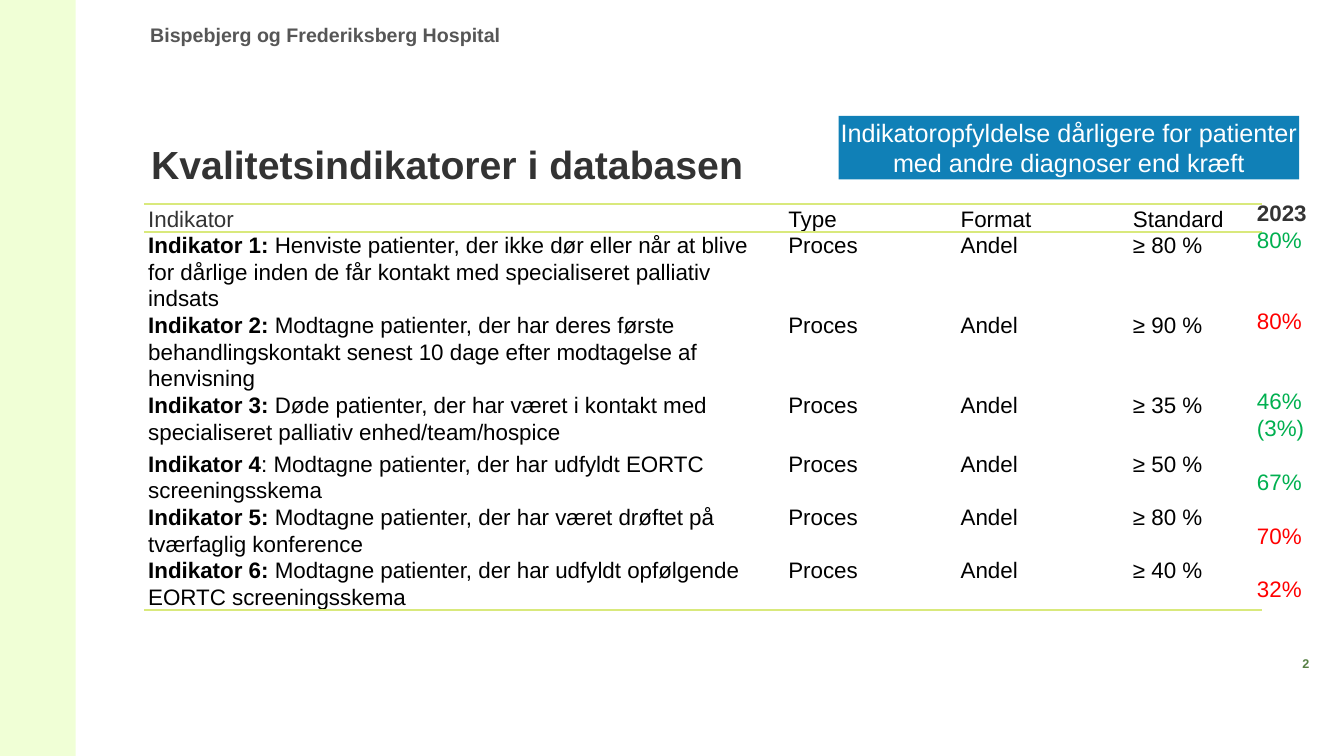
import dataclasses
import typing

import lxml.etree
import pptx
import pptx.dml.color
import pptx.enum.shapes
import pptx.enum.text
import pptx.oxml.ns
import pptx.util

Pt = pptx.util.Pt
RGBColor = pptx.dml.color.RGBColor
Align = pptx.enum.text.PP_ALIGN
Anchor = pptx.enum.text.MSO_ANCHOR
qn = pptx.oxml.ns.qn

DARK = RGBColor(0x33, 0x33, 0x33)
GREY = RGBColor(0x56, 0x56, 0x56)
BLACK = RGBColor(0, 0, 0)
WHITE = RGBColor(0xFF, 0xFF, 0xFF)
MINT = RGBColor(0xF0, 0xFF, 0xD6)
MOSS = RGBColor(0x56, 0x7F, 0x43)
LIME = RGBColor(0xD9, 0xE9, 0x7C)
BLUE = RGBColor(0x10, 0x80, 0xB7)
GREEN = RGBColor(0x00, 0xB0, 0x50)
RED = RGBColor(0xFF, 0x00, 0x00)

FONT = "Arial"
LEAD = 1.07
LINE = 19.18


@dataclasses.dataclass(frozen=True)
class Box:
    left: float
    top: float
    width: float
    height: float

    def place(self) -> tuple:
        return Pt(self.left), Pt(self.top), Pt(self.width), Pt(self.height)


@dataclasses.dataclass(frozen=True)
class Metric:
    label: str
    text: str
    goal: str
    height: float


@dataclasses.dataclass(frozen=True)
class Score:
    text: str
    color: RGBColor
    gap: int = 0
    bold: bool = False


HEADS = ("Indikator", "Type", "Format", "Standard")
WIDTHS = (457.2, 123.12, 123.12, 95.04)
SIDES = ("lnL", "lnR", "lnT", "lnB")
LOW, MID, HIGH = 20.16, 41.76, 57.2

METRICS = (
    Metric("Indikator 1: ", "Henviste patienter, der ikke dør eller når at blive for dårlige "
           "inden de får kontakt med specialiseret palliativ indsats", "≥ 80 %", HIGH),
    Metric("Indikator 2: ", "Modtagne patienter, der har deres første behandlingskontakt "
           "senest 10 dage efter modtagelse af henvisning", "≥ 90 %", HIGH),
    Metric("Indikator 3: ", "Døde patienter, der har været i kontakt med specialiseret "
           "palliativ enhed/team/hospice", "≥ 35 %", MID),
    Metric("Indikator 4", ": Modtagne patienter, der har udfyldt EORTC screeningsskema",
           "≥ 50 %", LOW),
    Metric("Indikator 5: ", "Modtagne patienter, der har været drøftet på tværfaglig konference",
           "≥ 80 %", LOW),
    Metric("Indikator 6: ", "Modtagne patienter, der har udfyldt opfølgende EORTC screeningsskema",
           "≥ 40 %", LOW),
)

SCORES = (
    Score("2023", DARK, bold=True),
    Score("80%", GREEN),
    Score("80%", RED, 2),
    Score("46%", GREEN, 2),
    Score("(3%)", GREEN),
    Score("67%", GREEN, 1),
    Score("70%", RED, 1),
    Score("32%", RED, 1),
)


def write(para: typing.Any, text: str, size: float, color: RGBColor, bold: bool = False) -> None:
    run = para.add_run()
    run.text = text
    run.font.name = FONT
    run.font.size = Pt(size)
    run.font.bold = bold
    run.font.color.rgb = color


def reset(frame: typing.Any) -> typing.Any:
    frame.word_wrap = True
    frame.auto_size = pptx.enum.text.MSO_AUTO_SIZE.NONE
    frame.margin_left = frame.margin_right = 0
    frame.margin_top = frame.margin_bottom = 0
    return frame


def add_text(slide: typing.Any, box: Box) -> typing.Any:
    return reset(slide.shapes.add_textbox(*box.place()).text_frame)


def add_rect(slide: typing.Any, box: Box, fill: RGBColor) -> typing.Any:
    kind = pptx.enum.shapes.MSO_SHAPE.RECTANGLE
    rect = slide.shapes.add_shape(kind, *box.place())
    rect.shadow.inherit = False
    rect.fill.solid()
    rect.fill.fore_color.rgb = fill
    rect.line.fill.background()
    return rect


def add_rules(cell: typing.Any, shown: list[str]) -> None:
    props = cell._tc.get_or_add_tcPr()
    for spot, side in enumerate(SIDES):
        line = lxml.etree.Element(qn(f"a:{side}"), w=str(Pt(1.5)))
        if side in shown:
            fill = lxml.etree.SubElement(line, qn("a:solidFill"))
            lxml.etree.SubElement(fill, qn("a:srgbClr"), val=str(LIME))
        else:
            lxml.etree.SubElement(line, qn("a:noFill"))
        props.insert(spot, line)


def fill_cell(cell: typing.Any, parts: list[tuple[str, bool]], color: RGBColor,
              sides: list[str], anchor: typing.Any) -> None:
    cell.margin_left, cell.margin_right = Pt(2.88), Pt(6)
    cell.margin_top = cell.margin_bottom = 0
    cell.vertical_anchor = anchor
    cell.fill.solid()
    cell.fill.fore_color.rgb = WHITE
    add_rules(cell, sides)
    para = cell.text_frame.paragraphs[0]
    para.line_spacing = LEAD
    for text, bold in parts:
        write(para, text, 16, color, bold)


def add_grid(slide: typing.Any) -> None:
    box = Box(103, 145.44, sum(WIDTHS), LOW + sum(m.height for m in METRICS))
    last = len(METRICS)
    grid = slide.shapes.add_table(last + 1, len(HEADS), *box.place()).table
    grid.first_row = grid.horz_banding = False
    for col, width in zip(grid.columns, WIDTHS):
        col.width = Pt(width)
    grid.rows[0].height = Pt(LOW)
    for col, head in enumerate(HEADS):
        color = BLACK if col else DARK
        fill_cell(grid.cell(0, col), [(head, False)], color, ["lnT", "lnB"], Anchor.BOTTOM)
    for row, item in enumerate(METRICS, 1):
        grid.rows[row].height = Pt(item.height)
        sides = {1: ["lnT"], last: ["lnB"]}.get(row, [])
        cells = [[(item.label, True), (item.text, False)]]
        cells += [[(word, False)] for word in ("Proces", "Andel", item.goal)]
        for col, parts in enumerate(cells):
            fill_cell(grid.cell(row, col), parts, BLACK, sides, Anchor.TOP)


def add_scores(slide: typing.Any) -> None:
    frame = add_text(slide, Box(897.84, 142.56, 62, 345.6))
    for spot, score in enumerate(SCORES):
        para = frame.add_paragraph() if spot else frame.paragraphs[0]
        para.line_spacing = Pt(LINE)
        if score.gap:
            para.space_before = Pt(score.gap * LINE)
        write(para, score.text, 16, score.color, score.bold)


def add_title(slide: typing.Any) -> None:
    title = slide.shapes.title
    title.left, title.top, title.width, title.height = Box(108, 68.4, 798.5, 65.5).place()
    frame = reset(title.text_frame)
    frame.vertical_anchor = Anchor.BOTTOM
    para = frame.paragraphs[0]
    para.alignment = Align.LEFT
    para.line_spacing = 0.85
    write(para, "Kvalitetsindikatorer i databasen", 28, DARK, True)


def add_note(slide: typing.Any) -> None:
    frame = reset(add_rect(slide, Box(599, 82.8, 329, 45.36), BLUE).text_frame)
    frame.vertical_anchor = Anchor.MIDDLE
    para = frame.paragraphs[0]
    para.alignment = Align.CENTER
    write(para, "Indikatoropfyldelse dårligere for patienter med andre diagnoser end kræft", 18, WHITE)


def main() -> None:
    deck = pptx.Presentation()
    deck.slide_width, deck.slide_height = Pt(960), Pt(540)
    slide = deck.slides.add_slide(deck.slide_layouts[5])
    add_rect(slide, Box(0, 0, 54, 540), MINT)
    place = add_text(slide, Box(107.28, 16.56, 481.68, 17.28)).paragraphs[0]
    write(place, "Bispebjerg og Frederiksberg Hospital", 14, GREY, True)
    page = add_text(slide, Box(905.76, 468.72, 54, 14.4)).paragraphs[0]
    page.alignment = Align.CENTER
    write(page, "2", 9, MOSS, True)
    add_grid(slide)
    add_scores(slide)
    add_title(slide)
    add_note(slide)
    deck.save("out.pptx")


if __name__ == "__main__":
    main()
